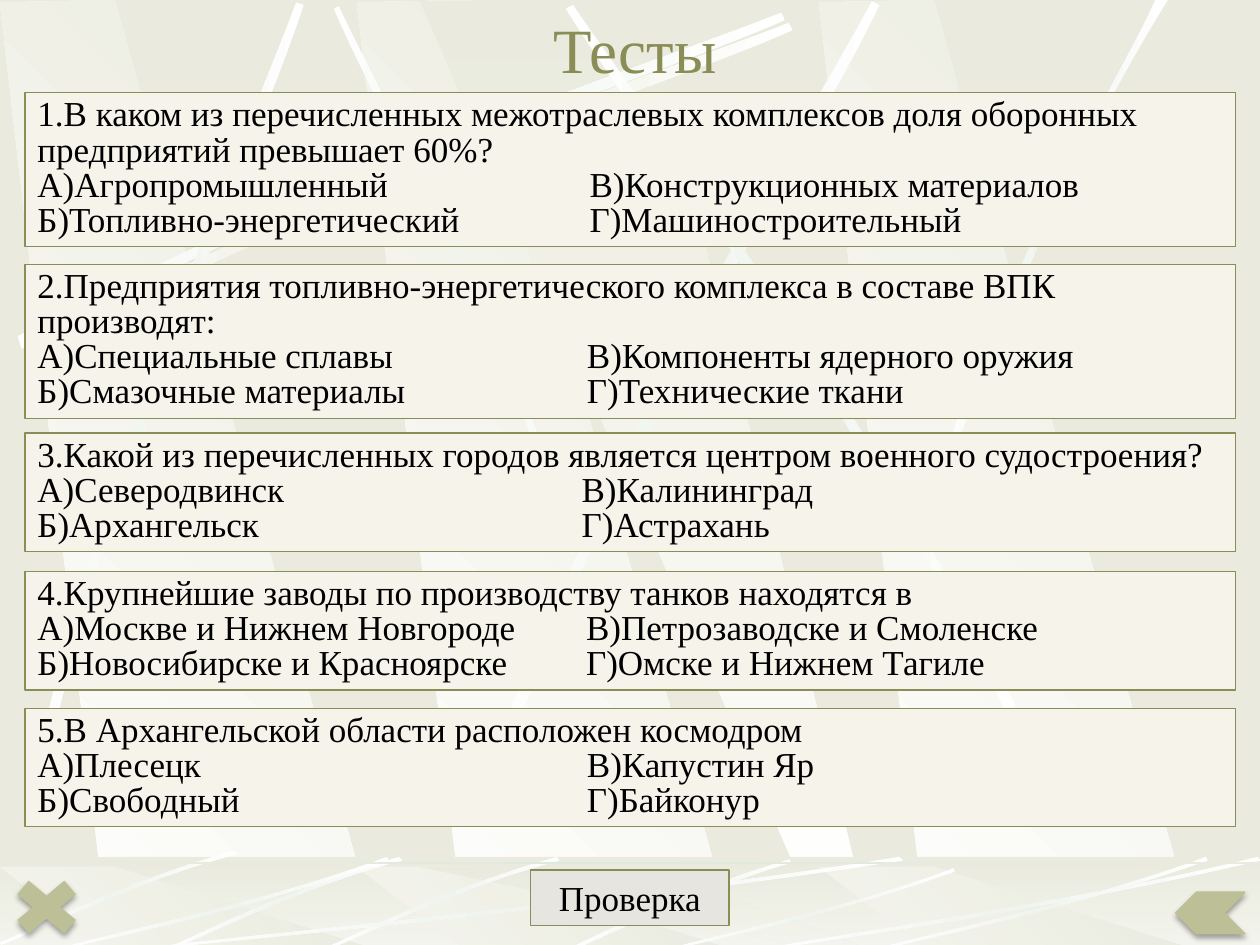
from lxml.etree import SubElement
from pptx import Presentation
from pptx.dml.color import RGBColor
from pptx.enum.shapes import MSO_SHAPE as Preset
from pptx.enum.text import MSO_ANCHOR as Anchor, MSO_AUTO_SIZE as AutoSize, PP_ALIGN as Align
from pptx.oxml.ns import qn
from pptx.util import Pt

SAND, WHITE, MIST = "EAEBDE", "FFFFFF", "EFF4EF"
OLIVE, KHAKI, CREAM, GREY, BLACK = "8A8E56", "BDC097", "F5F3EA", "E6E5DF", "000000"
SHINE = [WHITE, MIST, WHITE]

PANEL = [(62, 540), (217.5, 541.5), (65.5, 0), (0, 1.5)]
LOW_PANEL = [(62, 543), (217.5, 543.6), (65.5, 495.4), (0, 495.4)]
PANEL_LEFTS = [204, 0, 468]
WEDGE = [(240, 0.7), (473.8, 540.7), (499.7, 540.7), (369.4, 0)]
LOW_WEDGE = [(240, 495.4), (473.8, 543.6), (499.7, 543.6), (369.4, 495.4)]

LONG_RAY = [(14.4, 198), (204.5, 96.5), (377.3, 42.5), (450.7, 13),
            (452.9, 17.3), (380.2, 49.7), (182.9, 108.7), (16.6, 205.2)]
STEEP_RAYS = [
    [(16.6, 450), (67, 240.5), (141.8, 75.6), (169.2, 1.4),
     (173.5, 2.9), (149, 78.5), (61.9, 265), (23, 452.9)],
    [(277.2, 442.1), (358.6, 230.4), (459.4, 73.4), (498.2, 0.7),
     (502.6, 2.9), (467.3, 77.8), (349.9, 255.6), (283.7, 447.1)],
    [(580.3, 403.2), (482.4, 211), (371.5, 68.4), (327.6, 2.9),
     (323.3, 5), (365, 72.7), (493.2, 234), (575.3, 408.2)],
    [(531.4, 283.7), (586.1, 124.6), (639.4, 47.5), (660.2, 0),
     (667.4, 0), (601.9, 104.4), (553.7, 231.8), (535.7, 285.8)],
]
CROSSING_RAY = [(331.2, 313.9), (281.5, 168.5), (217.4, 55.4), (193.7, 3.6),
                (190.8, 5), (212.4, 56.9), (286.6, 185.8), (326.9, 316.1)]
FLOOR_RAY = [(451.4, 491), (386.6, 510.5), (343.4, 534.2), (322.6, 542.9),
             (326.2, 543.6), (352.8, 531.4), (411.1, 504), (452.2, 493.2)]
SHORT_RAY = [(318.2, 489.6), (255.6, 507.6), (206.6, 532.8), (184.3, 542.2),
             (185, 543.6), (207.4, 535), (262.8, 506.2), (319.7, 491.8)]
SHORT_SHIFTS = [(0, 0), (-90, 0), (-184.3, -3.6)]
FLAT_RAY = [(516.2, 491.8), (323.3, 520.6), (148.3, 535.7), (74.2, 543.6),
            (72, 542.9), (145.4, 533.5), (345.6, 517), (514.1, 489.6)]
FLAT_PLACES = [(72, 444, 54), (30, 192, 54), (379.4, 166.3, 47.5), (498, 192, 54), (432, 288, 54)]

QUESTIONS = [
    (53, 87.8, 315.5,
     "1.В каком из перечисленных межотраслевых комплексов доля оборонных предприятий превышает 60%?",
     "А)Агропромышленный", "В)Конструкционных материалов",
     "Б)Топливно-энергетический", "Г)Машиностроительный"),
    (151.2, 87.8, 314,
     "2.Предприятия топливно-энергетического комплекса в составе ВПК производят:",
     "А)Специальные сплавы", "В)Компоненты ядерного оружия",
     "Б)Смазочные материалы", "Г)Технические ткани"),
    (247.5, 67.7, 311,
     "3.Какой из перечисленных городов является центром военного судостроения?",
     "А)Северодвинск", "В)Калининград", "Б)Архангельск", "Г)Астрахань"),
    (326.6, 67.7, 313.5,
     "4.Крупнейшие заводы по производству танков находятся в",
     "А)Москве и Нижнем Новгороде", "В)Петрозаводске и Смоленске",
     "Б)Новосибирске и Красноярске", "Г)Омске и Нижнем Тагиле"),
    (404.8, 67.7, 314,
     "5.В Архангельской области расположен космодром",
     "А)Плесецк", "В)Капустин Яр", "Б)Свободный", "Г)Байконур"),
]


def color(value):
    return RGBColor.from_string(value)


def shifted(points, right, down=0):
    return [(x + right, y + down) for x, y in points]


def fitted(points, left, width, height):
    return [(left + (x - 72) * width / 444, 543.6 + (y - 543.6) * height / 54) for x, y in points]


class Painter:
    font = "Times New Roman"

    def __init__(self, page):
        self.page = page
        self.shapes = page.shapes

    def paint(self, shape, fill, line=None, angle=0, alpha=None):
        shape.shadow.inherit = False
        if isinstance(fill, list):
            shape.fill.gradient()
            shape.fill.gradient_angle = -angle % 360
            stops = shape.element.spPr.find(".//" + qn("a:gsLst"))
            for stop in list(stops):
                stops.remove(stop)
            for index, value in enumerate(fill):
                position = str(100000 * index // (len(fill) - 1))
                stop = SubElement(stops, qn("a:gs"), pos=position)
                SubElement(stop, qn("a:srgbClr"), val=value)
        else:
            shape.fill.solid()
            shape.fill.fore_color.rgb = color(fill)
        if alpha:
            tint = shape.element.spPr.find(".//" + qn("a:srgbClr"))
            SubElement(tint, qn("a:alpha"), val=str(alpha * 1000))
        if line:
            shape.line.color.rgb = color(line)
            shape.line.width = Pt(0.75)
        else:
            shape.line.fill.background()
        return shape

    def shape(self, preset, left, top, width, height, fill, **style):
        shape = self.shapes.add_shape(preset, Pt(left), Pt(top), Pt(width), Pt(height))
        return self.paint(shape, fill, **style)

    def outline(self, points, fill, angle=0):
        corners = [(Pt(x), Pt(y)) for x, y in points]
        builder = self.shapes.build_freeform(*corners[0])
        builder.add_line_segments(corners[1:], close=True)
        return self.paint(builder.convert_to_shape(), fill, angle=angle)

    def ray(self, points, fill=SHINE):
        ray = self.outline(points, fill)
        sides = list(ray.element.iter(qn("a:lnTo")))
        for bend in (sides[:3], sides[4:7]):
            bend[0].tag = qn("a:cubicBezTo")
            for side in bend[1:]:
                bend[0].append(side[0])
                side.getparent().remove(side)

    def icon(self, preset, left, top, width, height, line=None):
        icon = self.shape(preset, left, top, width, height, KHAKI, line=line)
        effects = icon.element.spPr.find(qn("a:effectLst"))
        shadow = SubElement(effects, qn("a:outerShdw"), blurRad="40000", dist="23000",
                            dir="5400000", rotWithShape="0")
        tint = SubElement(shadow, qn("a:srgbClr"), val=BLACK)
        SubElement(tint, qn("a:alpha"), val="35000")
        return icon

    def text(self, shape, lines, size, ink, align, anchor, spacing=None, tab=None):
        frame = shape.text_frame
        frame.word_wrap = True
        frame.auto_size = AutoSize.SHAPE_TO_FIT_TEXT
        frame.vertical_anchor = anchor
        for index, line in enumerate(lines):
            para = frame.add_paragraph() if index else frame.paragraphs[0]
            para.alignment = align
            if spacing:
                para.line_spacing = Pt(spacing)
            if tab and "\t" in line:
                tabs = SubElement(para._p.get_or_add_pPr(), qn("a:tabLst"))
                SubElement(tabs, qn("a:tab"), pos=str(Pt(tab)), algn="l")
            span = para.add_run()
            span.text = line
            span.font.name = self.font
            span.font.size = Pt(size)
            span.font.color.rgb = color(ink)

    def title(self, words, left, top, width, height):
        title = self.page.shapes.title
        title.left, title.top, title.width, title.height = map(Pt, (left, top, width, height))
        title.element.getparent().append(title.element)
        self.text(title, [words], 36, OLIVE, Align.CENTER, Anchor.MIDDLE)

    def question(self, top, height, tab, ask, a, c, b, d):
        box = self.shape(Preset.RECTANGLE, 14.3, top, 691.9, height, CREAM, line=OLIVE)
        self.text(box, [ask, f"{a}\t{c}", f"{b}\t{d}"], 20, BLACK, Align.LEFT, Anchor.TOP,
                  spacing=20, tab=tab)

    def button(self, words, left, top, width, height):
        box = self.shape(Preset.RECTANGLE, left, top, width, height, GREY, line=OLIVE)
        self.text(box, [words], 20, BLACK, Align.CENTER, Anchor.MIDDLE)

    def backdrop(self, master):
        fill = master.background.fill
        fill.solid()
        fill.fore_color.rgb = color(SAND)
        group = self.page.shapes.add_group_shape()
        self.shapes = group.shapes
        self.wall()
        self.floor()
        self.shapes = self.page.shapes
        master.element.cSld.spTree.append(group.element)

    def beams(self, panel, wedge):
        for left in PANEL_LEFTS:
            self.outline(shifted(panel, left), [WHITE, SAND], angle=315)
        self.outline(wedge, [SAND, WHITE], angle=90)

    def wall(self):
        self.beams(PANEL, WEDGE)
        self.ray(LONG_RAY, [WHITE, SAND, WHITE])
        for points in [CROSSING_RAY, shifted(LONG_RAY, -4.3, -5.8), *STEEP_RAYS]:
            self.ray(points)

    def floor(self):
        area = (Preset.RECTANGLE, 0, 489.6, 720, 54)
        self.shape(*area, [SAND, WHITE], angle=90)
        self.beams(LOW_PANEL, LOW_WEDGE)
        self.shape(*area, SAND, alpha=50)
        self.ray(FLOOR_RAY)
        for shift in SHORT_SHIFTS:
            self.ray(shifted(SHORT_RAY, *shift))
        for place in FLAT_PLACES:
            self.ray(fitted(FLAT_RAY, *place))
        self.shape(Preset.RECTANGLE, 0, 492.5, 720, 1.5, [SAND, "DFEADF", SAND])


def main():
    deck = Presentation()
    deck.slide_width, deck.slide_height = Pt(720), Pt(540)
    painter = Painter(deck.slides.add_slide(deck.slide_layouts[5]))
    painter.backdrop(deck.slide_master)
    painter.icon(Preset.MATH_MULTIPLY, 0.7, 496.8, 51.8, 43.2)
    painter.title("Тесты", 25.6, 2.2, 674.6, 51.1)
    for question in QUESTIONS:
        painter.question(*question)
    painter.button("Проверка", 303.2, 497.2, 113.4, 31.7)
    arrow = painter.icon(Preset.CHEVRON, 671.8, 509.8, 39.6, 23.8, line=KHAKI)
    arrow.rotation = 180
    deck.save("out.pptx")


if __name__ == "__main__":
    main()
